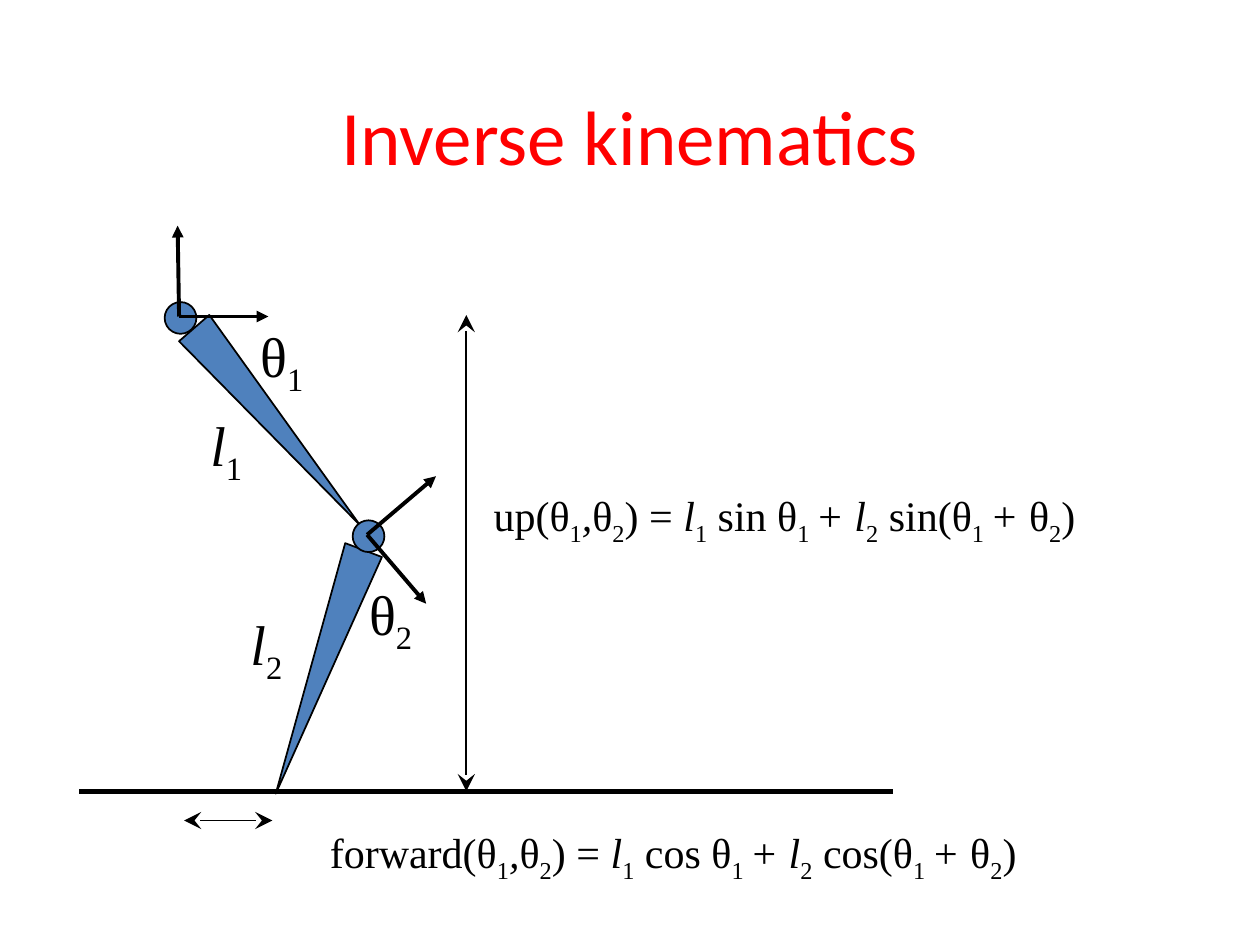
from lxml import etree
from pptx import Presentation, util as u
from pptx.dml.color import RGBColor
from pptx.enum import shapes, text
from pptx.oxml.ns import qn

BLACK, BLUE, RED = "000000", "4F81BD", "FF0000"


def colour(value):
    """Turn a hex string into a colour."""
    return RGBColor.from_string(value)


def style_shape(shape):
    """Give a solid part its blue fill and thin black outline."""
    shape.shadow.inherit = False
    shape.fill.solid()
    shape.fill.fore_color.rgb = colour(BLUE)
    shape.line.color.rgb = colour(BLACK)
    shape.line.width = u.Pt(1)


def add_line(page, start, end, width, head=None, tail=None, size="med"):
    """Draw a straight black line with optional arrowheads."""
    line = page.shapes.add_connector(
        shapes.MSO_CONNECTOR.STRAIGHT, *(u.Cm(v) for v in (*start, *end)))
    line.line.color.rgb = colour(BLACK)
    line.line.width = u.Pt(width)
    outline = line.line._get_or_add_ln()
    for tag, kind in (("a:headEnd", head), ("a:tailEnd", tail)):
        if kind:
            etree.SubElement(outline, qn(tag), type=kind, w=size, len=size)
    etree.SubElement(line._element.spPr, qn("a:effectLst"))


def add_text(page, box, spans, size, wrap):
    """Write spans of text, each marked plain, italic or subscript."""
    shape = page.shapes.add_textbox(*(u.Cm(v) for v in box))
    frame = shape.text_frame
    frame.word_wrap = wrap
    frame.auto_size = text.MSO_AUTO_SIZE.SHAPE_TO_FIT_TEXT
    para = frame.paragraphs[0]
    for words, look in spans:
        span = para.add_run()
        span.text = words
        span.font.name = "Times New Roman"
        span.font.size = u.Pt(size)
        span.font.color.rgb = colour(BLACK)
        span.font.italic = look == "italic"
        if look == "subscript":
            span._r.get_or_add_rPr().set("baseline", "-25000")


def add_title(page, box, words):
    """Fill and place the title placeholder."""
    title = page.shapes.title
    title.left, title.top, title.width, title.height = (u.Cm(v) for v in box)
    title.text_frame.vertical_anchor = text.MSO_ANCHOR.MIDDLE
    para = title.text_frame.paragraphs[0]
    para.alignment = text.PP_ALIGN.CENTER
    span = para.add_run()
    span.text = words
    span.font.name = "Calibri"
    span.font.size = u.Pt(44)
    span.font.color.rgb = colour(RED)


def add_leg(page, box):
    """Draw the two-link leg with its joints, axes and labels."""
    left, top = box

    def place(x, y):
        """Shift a point into the leg's box."""
        return left + x, top + y

    limbs = (((0.92, 1.85), (0.31, 2.38), (3.96, 6.09)),
             ((4.4, 6.73), (3.66, 6.45), (2.26, 11.5)))
    joints = ((0.34, 1.91), (4.13, 6.31))
    diameter = 0.64
    for limb, (x, y) in zip(limbs, joints):
        corners = [tuple(u.Cm(v) for v in place(*point)) for point in limb]
        builder = page.shapes.build_freeform(*corners[0])
        builder.add_line_segments(corners[1:], close=True)
        style_shape(builder.convert_to_shape())
        corner = place(x - diameter / 2, y - diameter / 2)
        style_shape(page.shapes.add_shape(
            shapes.MSO_SHAPE.OVAL,
            *(u.Cm(v) for v in (*corner, diameter, diameter))))

    axes = (((4.1, 6.28), (5.29, 7.67), (5.49, 5.1)),
            ((0.31, 1.88), (2.11, 1.88), (0.28, 0.05)))
    for origin, *tips in axes:
        for tip in tips:
            add_line(page, place(*origin), place(*tip), 2.25, tail="triangle")

    labels = (("l", "1", "italic", 0.69, 3.65, 1.19),
              ("θ", "2", "plain", 3.89, 7.06, 1.5),
              ("θ", "1", "plain", 1.7, 1.85, 1.5),
              ("l", "2", "italic", 1.5, 7.67, 1.19))
    for symbol, index, look, x, y, width in labels:
        add_text(page, (*place(x, y), width, 1.62),
                 [(symbol, look), (index, "subscript")], 32, False)


def add_measures(page, box):
    """Draw the ground line and the height and forward arrows."""
    left, top, width, height = box
    ground = top + height
    add_line(page, (left, ground), (left + width, ground), 3)
    arrows = (((7.8, 0), (7.8, height)),
              ((2.11, height + 0.59), (3.89, height + 0.59)))
    for (x1, y1), (x2, y2) in arrows:
        add_line(page, (left + x1, top + y1), (left + x2, top + y2), 1,
                 head="stealth", tail="stealth", size="lg")


def add_equation(page, box, name, function):
    """Write a foot position as a function of the joint angles."""
    spans = [
        (f"{name}(θ", "plain"), ("1", "subscript"), (",", "italic"),
        ("θ", "plain"), ("2", "subscript"), (") = ", "plain"),
        ("l", "italic"), ("1", "subscript"),
        (f" {function} θ", "plain"), ("1 ", "subscript"),
        ("+ l", "italic"), ("2", "subscript"),
        (f" {function}(θ", "plain"), ("1 ", "subscript"),
        ("+ ", "italic"), ("θ", "plain"), ("2", "subscript"), (")", "plain"),
    ]
    add_text(page, box, spans, 24, True)


def main():
    """Build the inverse kinematics slide."""
    deck = Presentation()
    deck.slide_width, deck.slide_height = u.Cm(25.4), u.Cm(19.05)
    page = deck.slides.add_slide(deck.slide_layouts[5])
    add_title(page, (0, 1.12, 25.4, 3.18), "Inverse kinematics")
    add_leg(page, (3.3, 4.5))
    add_measures(page, (1.6, 6.35, 16.41, 9.6))
    add_equation(page, (9.7, 9.75, 15.7, 1.45), "up", "sin")
    add_equation(page, (6.4, 16.54, 20.4, 1.45), "forward", "cos")
    deck.save("out.pptx")


if __name__ == "__main__":
    main()
